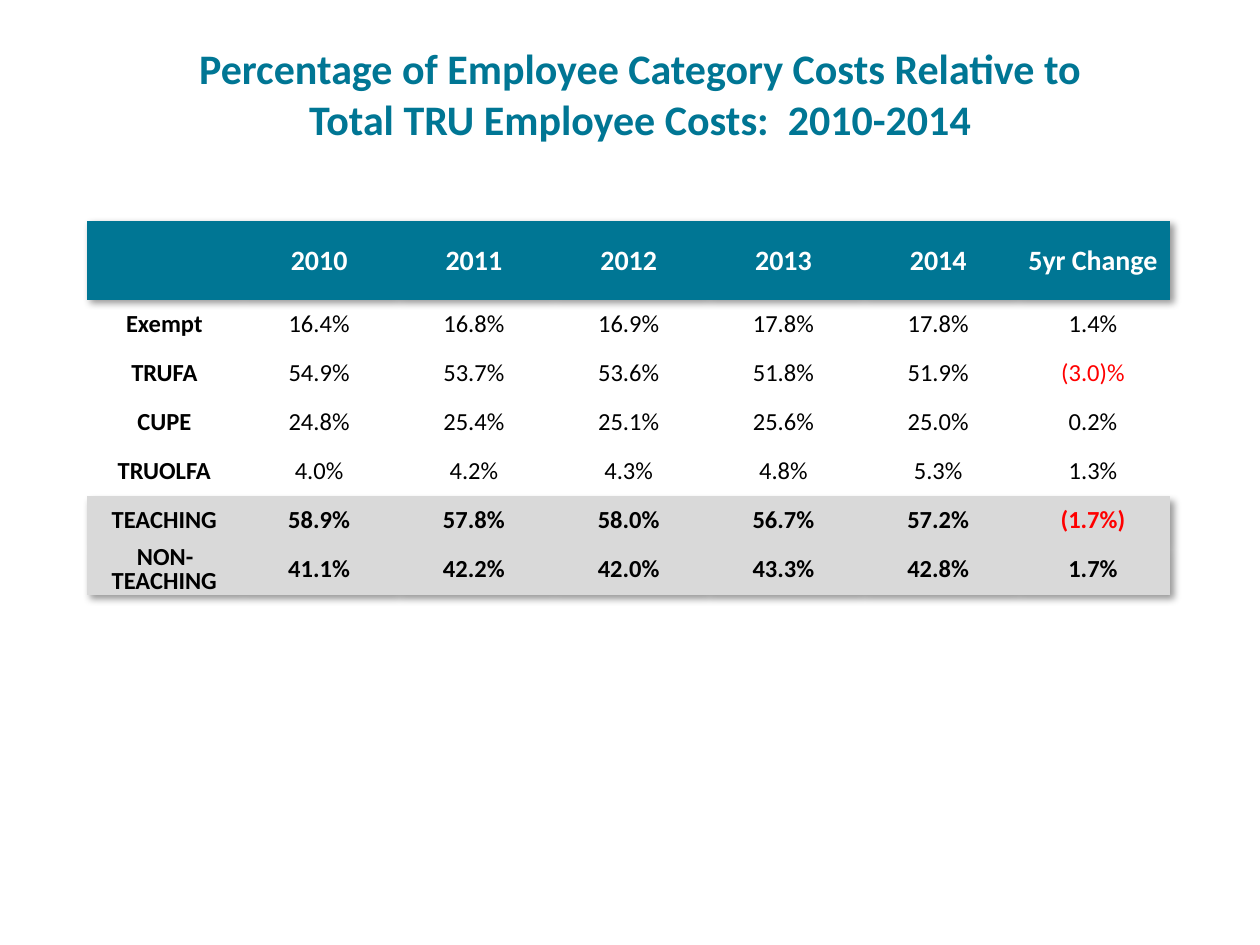
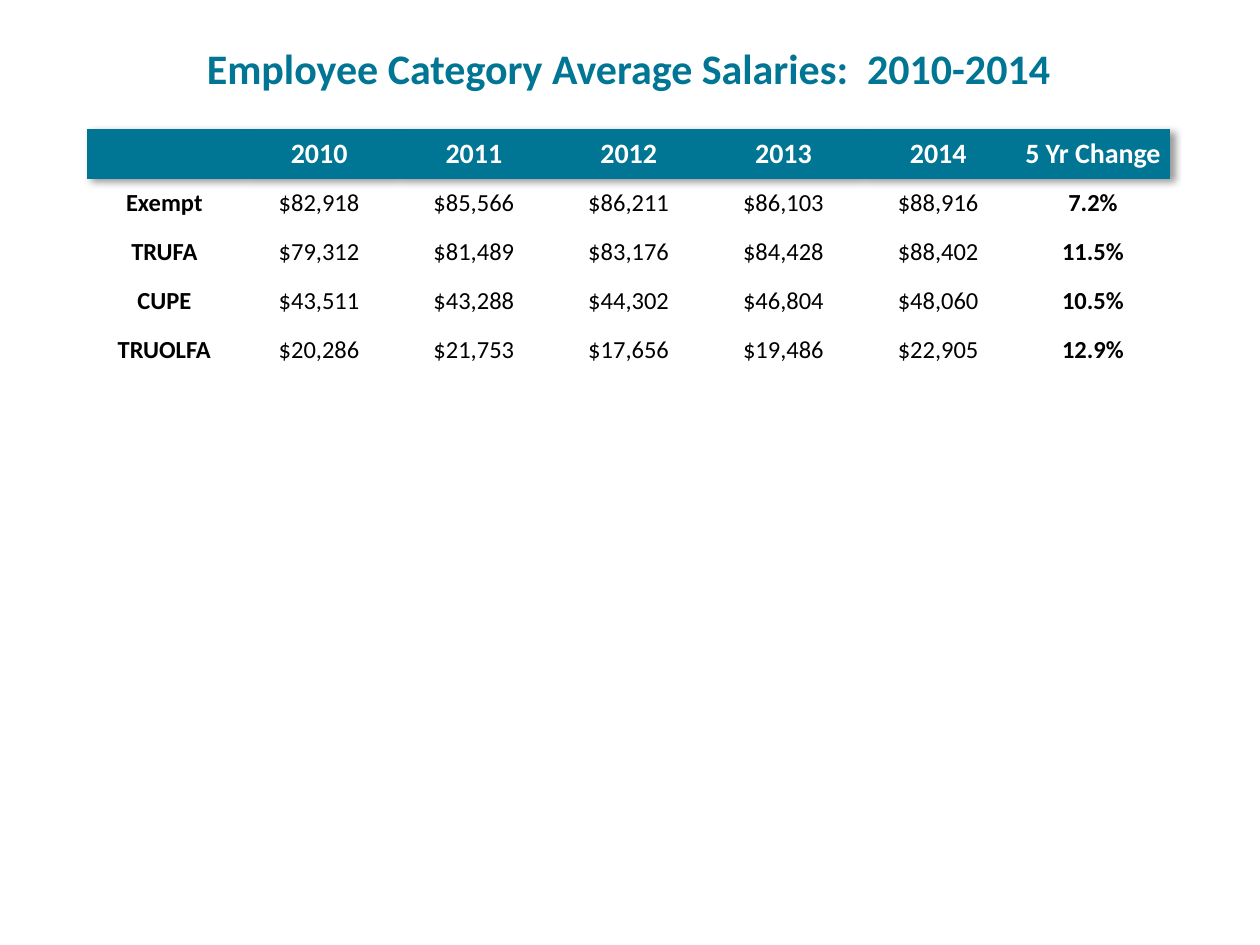
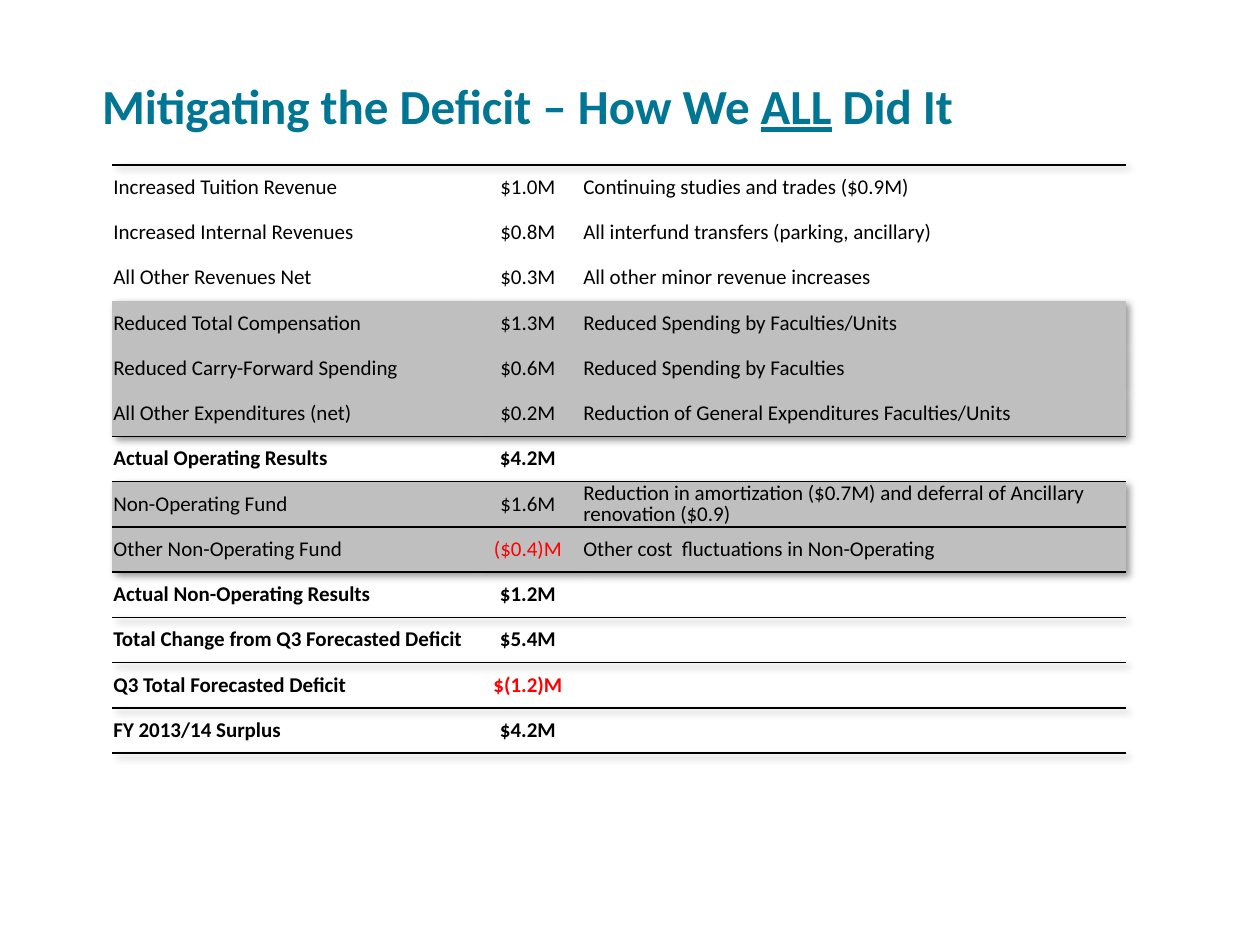
from lxml import etree
from pptx import Presentation
from pptx.dml.color import RGBColor
from pptx.enum.text import MSO_ANCHOR, MSO_AUTO_SIZE, PP_ALIGN
from pptx.oxml import parse_xml
from pptx.oxml.ns import nsdecls, qn
from pptx.util import Inches, Pt

TEAL = RGBColor(0x00, 0x76, 0x94)
WHITE = RGBColor(0xFF, 0xFF, 0xFF)
BLACK = RGBColor(0x00, 0x00, 0x00)
RED = RGBColor(0xFF, 0x00, 0x00)
LIGHT_GREY = RGBColor(0xD9, 0xD9, 0xD9)
MID_GREY = RGBColor(0xBF, 0xBF, 0xBF)

FONT = "Calibri"
PLAIN_STYLE = "{2D5ABB26-0587-4C30-8999-92F81FD0307C}"
SHADOW = f"""<a:effectLst {nsdecls("a")}>
  <a:outerShdw blurRad="50800" dist="38100" dir="2700000" algn="tl" rotWithShape="0">
    <a:srgbClr val="000000"><a:alpha val="40000"/></a:srgbClr>
  </a:outerShdw>
</a:effectLst>"""
CELL_FORMAT = {
    "margin_left": Inches(0.01),
    "margin_right": Inches(0.01),
    "margin_top": Inches(0.01),
    "margin_bottom": 0,
    "vertical_anchor": MSO_ANCHOR.MIDDLE,
}
TITLE_FRAME = {
    "word_wrap": True,
    "auto_size": MSO_AUTO_SIZE.SHAPE_TO_FIT_TEXT,
    "vertical_anchor": MSO_ANCHOR.TOP,
}
YEARS = ["2010", "2011", "2012", "2013", "2014"]

presentation = Presentation()
presentation.slide_width = Inches(10)
presentation.slide_height = Inches(7.5)


def add_titled_slide(pieces, left, top, width, height, size, alignment):
    slide = presentation.slides.add_slide(presentation.slide_layouts[5])
    title = slide.shapes.title
    title.left, title.top = Inches(left), Inches(top)
    title.width, title.height = Inches(width), Inches(height)
    for name, value in TITLE_FRAME.items():
        setattr(title.text_frame, name, value)
    paragraph = title.text_frame.paragraphs[0]
    paragraph.alignment = alignment
    paragraph.space_after = Pt(6)
    for index, piece in enumerate(pieces):
        run = paragraph.add_run()
        run.text = piece
        run.font.name, run.font.size, run.font.bold = FONT, Pt(size), True
        run.font.color.rgb = TEAL
        run.font.underline = index % 2 == 1
    return slide


def add_grid(slide, rows, left, top, widths, heights, style_cell, ruled_rows=()):
    frame = slide.shapes.add_table(
        len(rows), len(widths), Inches(left), Inches(top),
        Inches(sum(widths)), Inches(sum(heights)))
    table = frame.table
    table.first_row = table.horz_banding = False
    properties = table._tbl.tblPr
    properties.find(qn("a:tableStyleId")).text = PLAIN_STYLE
    properties.insert(0, parse_xml(SHADOW))
    for column, width in zip(table.columns, widths):
        column.width = Inches(width)
    for row, height in zip(table.rows, heights):
        row.height = Inches(height)
    for row_index, row in enumerate(rows):
        for column_index, text in enumerate(row):
            cell = table.cell(row_index, column_index)
            style = style_cell(row_index, column_index)
            for name, value in CELL_FORMAT.items():
                setattr(cell, name, value)
            for tag, edge in (("a:lnT", row_index), ("a:lnB", row_index + 1)):
                if edge in ruled_rows:
                    line = etree.SubElement(cell._tc.get_or_add_tcPr(), qn(tag), w="12700")
                    fill = etree.SubElement(line, qn("a:solidFill"))
                    etree.SubElement(fill, qn("a:srgbClr"), val=str(BLACK))
            if style["fill"]:
                cell.fill.solid()
                cell.fill.fore_color.rgb = style["fill"]
            else:
                cell.fill.background()
            if text:
                paragraph = cell.text_frame.paragraphs[0]
                paragraph.alignment = style["alignment"]
                paragraph.line_spacing = style["spacing"]
                run = paragraph.add_run()
                run.text = text
                run.font.name, run.font.size = FONT, Pt(style["size"])
                run.font.bold = style["bold"]
                run.font.color.rgb = RED if "(" in text and column_index in style["signed"] else style["color"]


def category_style(row, column, bold_columns, total_rows):
    header = row == 0
    total = row in total_rows
    return {
        "fill": TEAL if header else LIGHT_GREY if total else None,
        "alignment": PP_ALIGN.CENTER,
        "spacing": 1.0 if header else 0.8,
        "size": 16 if header else 14,
        "bold": header or total or column in bold_columns,
        "color": WHITE if header else BLACK,
        "signed": [6],
    }


cost_rows = [
    ["", *YEARS, "5yr Change"],
    ["Exempt", "16.4%", "16.8%", "16.9%", "17.8%", "17.8%", "1.4%"],
    ["TRUFA", "54.9%", "53.7%", "53.6%", "51.8%", "51.9%", "(3.0)%"],
    ["CUPE", "24.8%", "25.4%", "25.1%", "25.6%", "25.0%", "0.2%"],
    ["TRUOLFA", "4.0%", "4.2%", "4.3%", "4.8%", "5.3%", "1.3%"],
    ["TEACHING", "58.9%", "57.8%", "58.0%", "56.7%", "57.2%", "(1.7%)"],
    ["NON-TEACHING", "41.1%", "42.2%", "42.0%", "43.3%", "42.8%", "1.7%"],
]
salary_rows = [
    ["", *YEARS, "5 Yr Change"],
    ["Exempt", "$82,918", "$85,566", "$86,211", "$86,103", "$88,916", "7.2%"],
    ["TRUFA", "$79,312", "$81,489", "$83,176", "$84,428", "$88,402", "11.5%"],
    ["CUPE", "$43,511", "$43,288", "$44,302", "$46,804", "$48,060", "10.5%"],
    ["TRUOLFA", "$20,286", "$21,753", "$17,656", "$19,486", "$22,905", "12.9%"],
]
deficit_rows = [
    ["Increased Tuition Revenue", "$1.0M", "Continuing studies and trades ($0.9M)"],
    ["Increased Internal Revenues", "$0.8M", "All interfund transfers (parking, ancillary)"],
    ["All Other Revenues Net", "$0.3M", "All other minor revenue increases"],
    ["Reduced Total Compensation", "$1.3M", "Reduced Spending by Faculties/Units"],
    ["Reduced Carry-Forward Spending", "$0.6M", "Reduced Spending by Faculties"],
    ["All Other Expenditures (net)", "$0.2M", "Reduction of General Expenditures Faculties/Units"],
    ["Actual Operating Results", "$4.2M", ""],
    ["Non-Operating Fund", "$1.6M",
     "Reduction in amortization ($0.7M) and deferral of Ancillary renovation ($0.9)"],
    ["Other Non-Operating Fund", "($0.4)M", "Other cost  fluctuations in Non-Operating"],
    ["Actual Non-Operating Results", "$1.2M", ""],
    ["Total Change from Q3 Forecasted Deficit", "$5.4M", ""],
    ["Q3 Total Forecasted Deficit", "$(1.2)M", ""],
    ["FY 2013/14 Surplus", "$4.2M", ""],
]

category_widths = [8.6 / 7] * 7

slide = add_titled_slide(
    ["Percentage of Employee Category Costs Relative to Total TRU Employee Costs:  2010-2014"],
    1.17, 0.29, 7.82, 0.91, 24, PP_ALIGN.CENTER)
add_grid(slide, cost_rows, 0.69, 1.75, category_widths, [0.63] + [0.39] * 6,
         lambda row, column: category_style(row, column, [0], [5, 6]))

slide = add_titled_slide(
    ["Employee Category Average Salaries:  2010-2014"],
    0.69, 0.29, 8.6, 0.5, 24, PP_ALIGN.CENTER)
add_grid(slide, salary_rows, 0.69, 1.02, category_widths, [0.4] + [0.39] * 4,
         lambda row, column: category_style(row, column, [0, 6], []))

slide = add_titled_slide(
    ["Mitigating the Deficit – How We ", "ALL", " Did It"],
    0.71, 0.55, 9.29, 0.57, 28, PP_ALIGN.LEFT)
add_grid(slide, deficit_rows, 0.89, 1.31, [2.87, 0.86, 4.32], [4.67 / 13] * 13,
         lambda row, column: {
             "fill": MID_GREY if row in (3, 4, 5, 7, 8) else None,
             "alignment": PP_ALIGN.CENTER if column == 1 else PP_ALIGN.LEFT,
             "spacing": 0.8,
             "size": 12,
             "bold": row in (6, 9, 10, 11, 12),
             "color": BLACK,
             "signed": [1],
         },
         ruled_rows=(0, 6, 7, 9, 10, 12, 13))

presentation.save("out.pptx")
